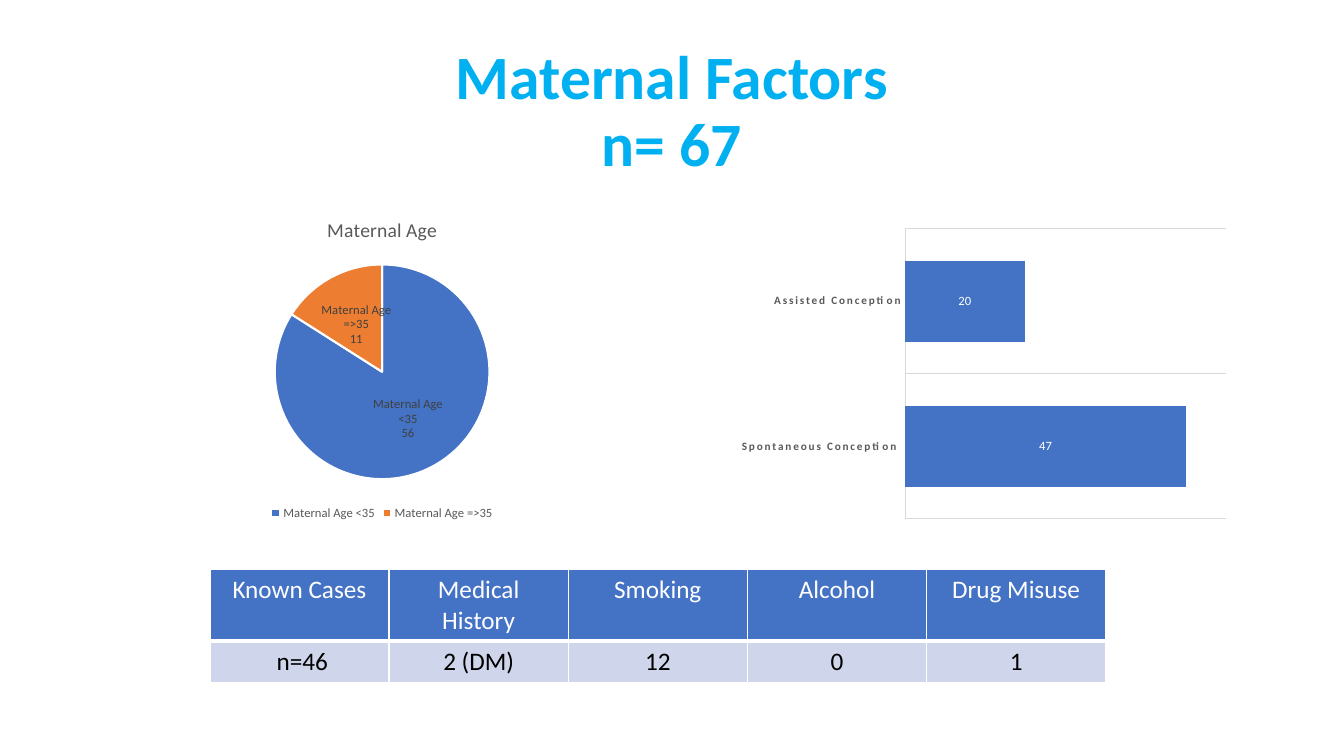
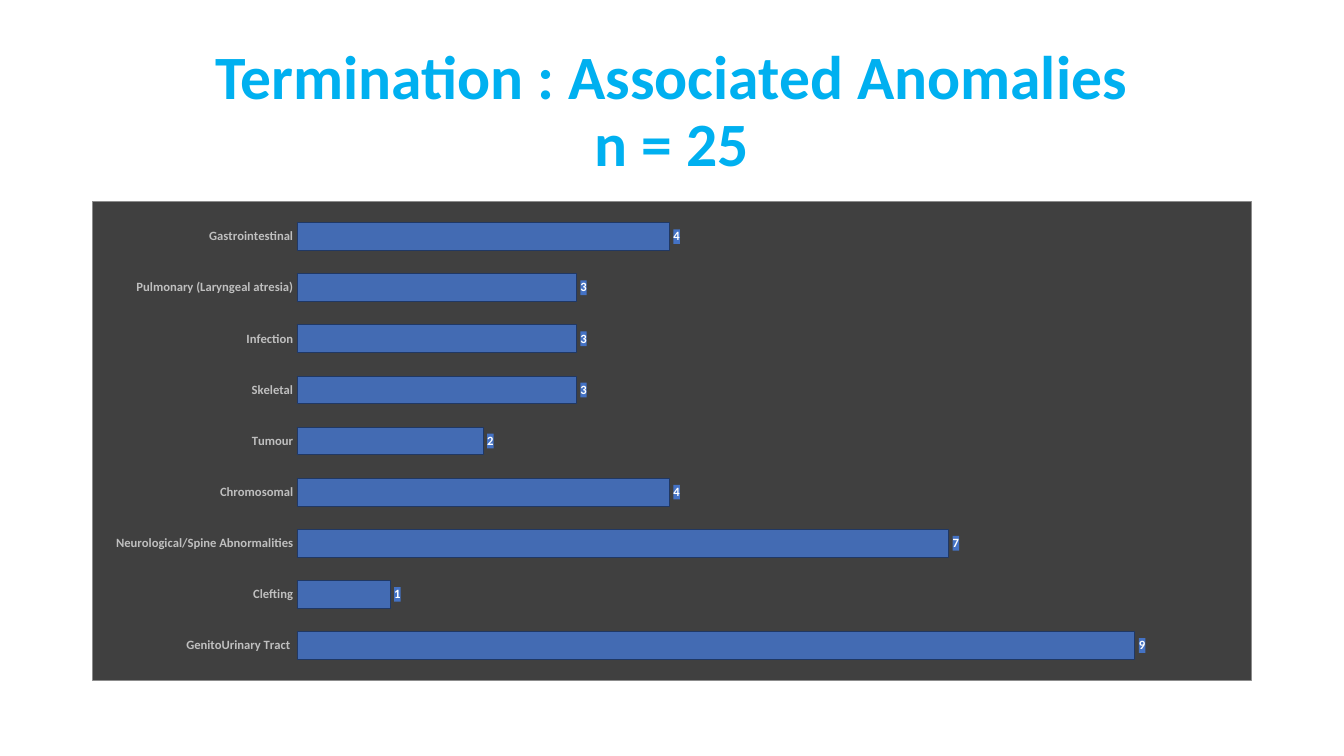
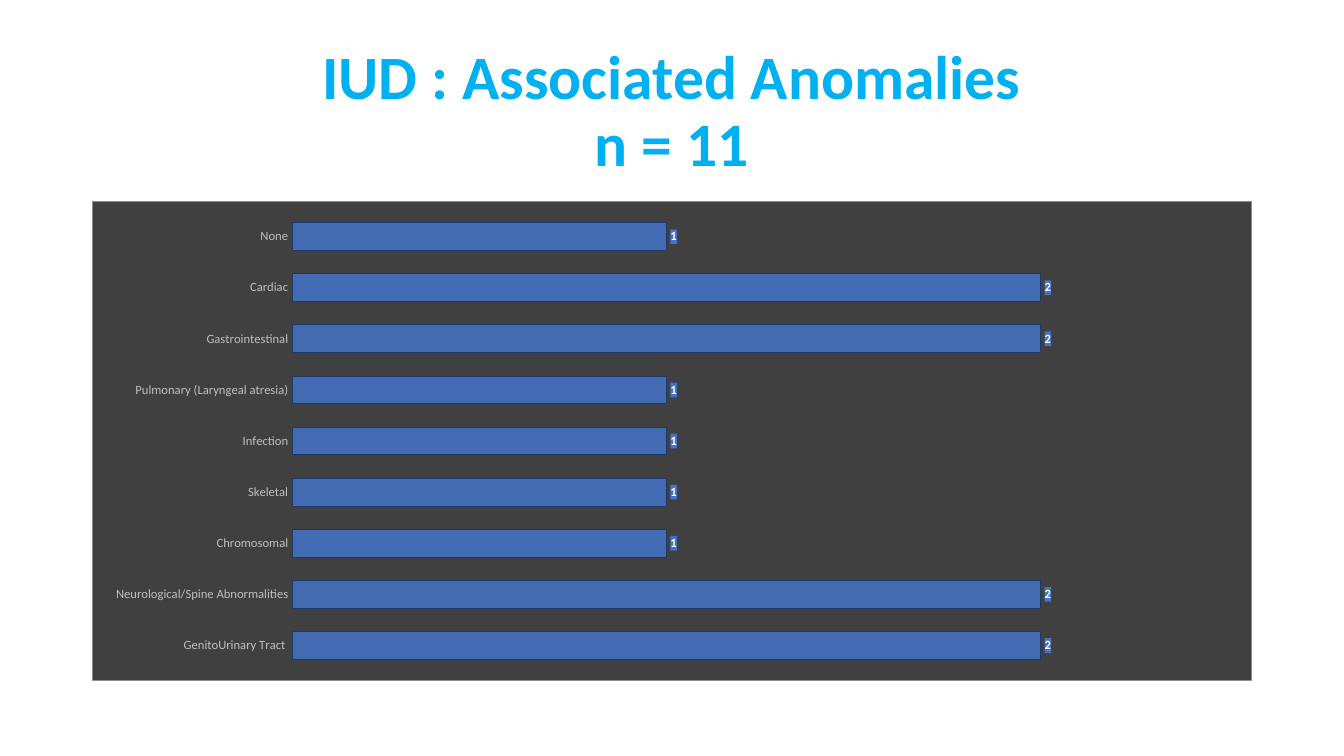
from pptx import Presentation
from pptx.chart.data import CategoryChartData
from pptx.dml.color import RGBColor
from pptx.enum.chart import XL_CHART_TYPE, XL_LABEL_POSITION, XL_LEGEND_POSITION, XL_TICK_MARK
from pptx.enum.text import MSO_ANCHOR, MSO_AUTO_SIZE, PP_ALIGN
from pptx.oxml import parse_xml
from pptx.oxml.ns import nsdecls
from pptx.util import Cm, Pt

BLUE, ORANGE, SKY = "4472C4", "ED7D31", "00B0F0"
WHITE, BLACK, PALE, NAVY = "FFFFFF", "000000", "CFD5EA", "203864"
GREY, RULE, DARK, SILVER, EDGE = "595959", "D9D9D9", "404040", "BFBFBF", "8C8C8C"


def hue(code):
    """Turn a hex string into a colour."""
    return RGBColor.from_string(code)


def face(font, size=10, color=BLACK, bold=False):
    """Set the look of a font."""
    font.name, font.size, font.bold = "Calibri", Pt(size), bold
    font.color.rgb = hue(color)


def put(frame, text, align=PP_ALIGN.CENTER, space=None, **look):
    """Fill a text frame and format its text."""
    frame.text = text
    for para in frame.paragraphs:
        para.alignment, para.line_spacing = align, space
        for run in para.runs:
            face(run.font, **look)


def paint(part, fill, line=None, width=0.75):
    """Fill a chart part and draw its outline."""
    part.format.fill.solid()
    part.format.fill.fore_color.rgb = hue(fill)
    if line:
        rule(part.format.line, line, width)


def rule(line, color, width=0.75):
    """Set the colour and width of a line."""
    line.color.rgb, line.width = hue(color), Pt(width)


def panel(fill, line=""):
    """Make the shape properties of a chart area or label."""
    edge = (f'<a:ln w="{Pt(0.5)}"><a:solidFill><a:srgbClr val="{line}"/>'
            '</a:solidFill></a:ln>') if line else ""
    return parse_xml(f'<c:spPr {nsdecls("c", "a")}><a:solidFill>'
                     f'<a:srgbClr val="{fill}"/></a:solidFill>{edge}</c:spPr>')


def border(cell, base):
    """Draw white borders round a cell."""
    props = cell._tc.get_or_add_tcPr()
    for spot, (side, width) in enumerate(zip("LRTB", (1, 1, 1, base))):
        props.insert(spot, parse_xml(
            f'<a:ln{side} {nsdecls("a")} w="{Pt(width)}"><a:solidFill>'
            f'<a:srgbClr val="{WHITE}"/></a:solidFill></a:ln{side}>'))


class Deck:
    """Hold the style and the current slide."""

    def __init__(self):
        """Start an empty wide deck."""
        self.show = Presentation()
        self.show.slide_width, self.show.slide_height = Cm(33.87), Cm(19.05)
        self.slide = None

    def page(self, title):
        """Add a slide with a centred title."""
        self.slide = self.show.slides.add_slide(self.show.slide_layouts[5])
        head = self.slide.shapes.title
        head.left, head.top, head.width, head.height = map(Cm, (2.33, 1.01, 29.21, 3.68))
        frame = head.text_frame
        frame.word_wrap, frame.auto_size = True, MSO_AUTO_SIZE.NONE
        frame.vertical_anchor = MSO_ANCHOR.MIDDLE
        put(frame, title, space=0.9, size=44, color=SKY, bold=True)

    def chart(self, kind, box, cats, vals, form="General"):
        """Add a chart with one series."""
        data = CategoryChartData(number_format=form)
        data.categories = cats
        data.add_series("Series 1", vals)
        chart = self.slide.shapes.add_chart(kind, *map(Cm, box), data).chart
        face(chart.font)
        chart.has_title = chart.has_legend = False
        return chart, chart.plots[0].series[0]

    def label(self, series, spot, size=9, **look):
        """Show labels on a series."""
        tags = series.data_labels
        tags.show_value, tags.position = True, spot
        face(tags.font, size=size, **look)
        return tags

    def note(self, series, notes, **look):
        """Give each point its own label."""
        for spot, text in enumerate(notes):
            tag = series.points[spot].data_label
            put(tag.text_frame, text, size=9, **look)
            tag.position = XL_LABEL_POSITION.CENTER

    def pie(self, box, title, cats, vals, notes):
        """Add a pie with a title and a legend."""
        chart, series = self.chart(XL_CHART_TYPE.PIE, box, cats, vals)
        chart.has_title = chart.has_legend = True
        put(chart.chart_title.text_frame, title, size=14, color=GREY)
        chart.legend.position = XL_LEGEND_POSITION.BOTTOM
        chart.legend.include_in_layout = False
        face(chart.legend.font, size=9, color=GREY)
        for spot, fill in enumerate((BLUE, ORANGE)):
            paint(series.points[spot], fill, WHITE, 1.5)
        tags = self.label(series, XL_LABEL_POSITION.CENTER, color=DARK)
        tags.show_value = False
        tags.show_percentage = tags.show_category_name = True
        self.note(series, notes, color=DARK)

    def axes(self, chart, gap, top, **look):
        """Format the axes of a bar chart."""
        plot, cat, val = chart.plots[0], chart.category_axis, chart.value_axis
        plot.gap_width, plot.vary_by_categories = gap, False
        val.visible = val.has_major_gridlines = False
        val.minimum_scale, val.maximum_scale = 0, top
        cat.major_tick_mark = cat.minor_tick_mark = XL_TICK_MARK.NONE
        face(cat.tick_labels.font, **look)
        return cat

    def stack(self, box, cats, vals, notes):
        """Add a ruled bar chart with written labels."""
        chart, series = self.chart(XL_CHART_TYPE.BAR_STACKED, box, cats, vals, "0.00%")
        cat = self.axes(chart, 79, 0.8, size=8, color=GREY, bold=True)
        chart.plots[0].overlap = 100
        cat.has_major_gridlines = True
        rule(cat.format.line, RULE)
        rule(cat.major_gridlines.format.line, RULE)
        for font in chart.element.xpath(".//c:catAx/c:txPr//a:defRPr"):
            font.set("spc", "120")
        paint(series, BLUE)
        self.label(series, XL_LABEL_POSITION.CENTER, color=WHITE)
        self.note(series, notes, color=WHITE)

    def bars(self, rows, top, bold):
        """Add a bar chart on a dark panel."""
        chart, series = self.chart(XL_CHART_TYPE.BAR_CLUSTERED,
                                   (2.33, 5.07, 29.21, 12.09), *zip(*rows))
        cat = self.axes(chart, 84, top, size=9, color=SILVER, bold=bold)
        cat.format.line.fill.background()
        paint(series, BLUE, NAVY)
        self.label(series, XL_LABEL_POSITION.OUTSIDE_END, color=WHITE, bold=True)
        root = chart.element
        root.xpath("./c:chart")[0].addnext(panel(DARK, EDGE))
        root.xpath(".//c:ser/c:dLbls/c:txPr")[0].addprevious(panel(BLUE))
        tint = root.xpath(".//c:ser/c:spPr/a:solidFill/a:srgbClr")[0]
        tint.append(parse_xml(f'<a:alpha {nsdecls("a")} val="88000"/>'))

    def table(self, box, rows):
        """Add a table with a blue head row."""
        grid = self.slide.shapes.add_table(len(rows), len(rows[0]), *map(Cm, box)).table
        looks = ((BLUE, WHITE, 3), (PALE, BLACK, 1))
        for row, texts, (fill, ink, base) in zip(grid.rows, rows, looks):
            for cell, text in zip(row.cells, texts):
                put(cell.text_frame, text, size=18, color=ink)
                cell.fill.solid()
                cell.fill.fore_color.rgb = hue(fill)
                border(cell, base)


def main():
    """Build the three slides."""
    deck = Deck()
    deck.page("Maternal Factors\vn= 67")
    deck.table((5.29, 14.35, 22.58, 2.08), (
        ("Known Cases", "Medical History", "Smoking", "Alcohol", "Drug Misuse"),
        (" n=46", "2 (DM)", "12", "0", "1")))
    deck.pie((2.33, 5.07, 14.6, 8.15), "Maternal Age",
             ("Maternal Age <35", "Maternal Age =>35"), (84, 16),
             ("Maternal Age <35\n56", "Maternal Age =>35\n11"))
    deck.stack((18.44, 5.61, 12.7, 7.62),
               ("Spontaneous Conception ", "Assisted Conception"),
               (0.7015, 0.2985), ("47", "20"))

    deck.page("Termination : Associated Anomalies\vn = 25")
    deck.bars((("GenitoUrinary Tract ", 9), ("Clefting", 1),
               ("Neurological/Spine Abnormalities", 7), ("Chromosomal", 4),
               ("Tumour", 2), ("Skeletal", 3), ("Infection", 3),
               ("Pulmonary (Laryngeal atresia)", 3), ("Gastrointestinal", 4)),
              top=10, bold=True)

    deck.page("IUD : Associated Anomalies\vn = 11")
    deck.bars((("GenitoUrinary Tract ", 2), ("Neurological/Spine Abnormalities", 2),
               ("Chromosomal", 1), ("Skeletal", 1), ("Infection", 1),
               ("Pulmonary (Laryngeal atresia)", 1), ("Gastrointestinal", 2),
               ("Cardiac", 2), ("None", 1)), top=2.5, bold=False)
    deck.show.save("out.pptx")


if __name__ == "__main__":
    main()
